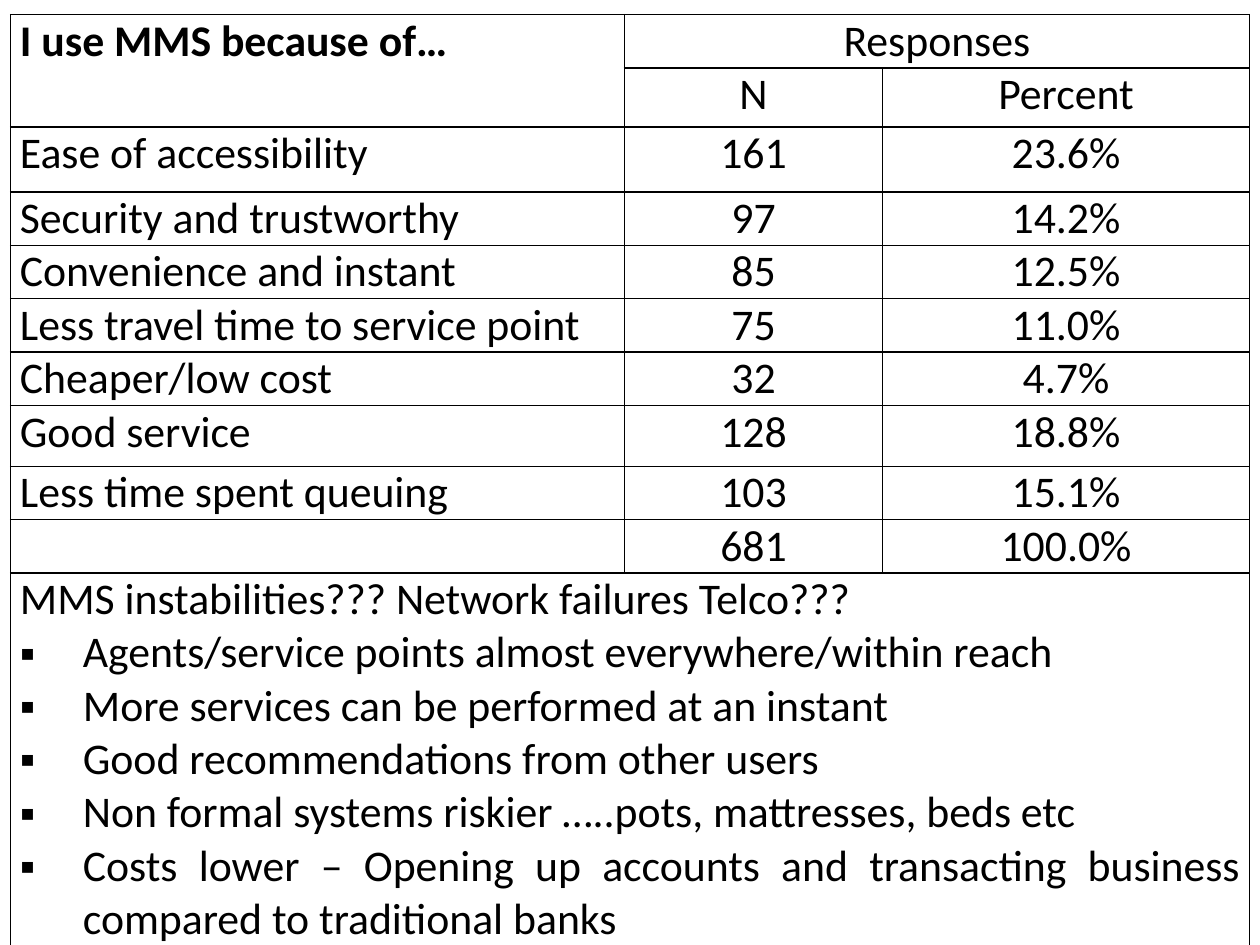
from lxml import etree
from pptx import Presentation
from pptx.dml import color
from pptx.enum import text
from pptx.oxml import ns
from pptx.util import Pt

BLACK = "000000"
ROW_HEIGHT = 30
TALL_ROWS = {1: 33.7, 2: 37.2, 7: 34.8, 10: 210.3}
COLUMN_WIDTHS = [350.8, 147.6, 209.5]
ROWS = [
    ("I use MMS because of…", "Responses", ""),
    ("", "N", "Percent"),
    ("Ease of accessibility", "161", "23.6%"),
    ("Security and trustworthy", "97", "14.2%"),
    ("Convenience and instant", "85", "12.5%"),
    ("Less travel time to service point", "75", "11.0%"),
    ("Cheaper/low cost", "32", "4.7%"),
    ("Good service", "128", "18.8%"),
    ("Less time spent queuing", "103", "15.1%"),
    ("", "681", "100.0%"),
    ("MMS instabilities??? Network failures Telco???", "", ""),
]
REASONS = [
    "Agents/service points almost everywhere/within reach",
    "More services can be performed at an instant",
    "Good recommendations from other users",
    "Non formal systems riskier …..pots, mattresses, beds etc",
    "Costs lower – Opening up accounts and transacting business "
    "compared to traditional banks",
]


def rgb(value):
    """Turn a hex string into a colour."""
    return color.RGBColor.from_string(value)


def write(para, words, size=25, bold=False, font="Calibri", fill=BLACK,
          align=text.PP_ALIGN.JUSTIFY):
    """Put formatted words into a paragraph."""
    para.alignment = align
    span = para.add_run()
    span.text = words
    span.font.size = Pt(size)
    span.font.bold = bold
    span.font.name = font
    span.font.color.rgb = rgb(fill)


def add_bullet(para, symbol="▪", indent=36):
    """Give a paragraph a hanging bullet."""
    properties = para._p.get_or_add_pPr()
    properties.set("marL", str(Pt(indent)))
    properties.set("indent", str(-Pt(indent)))
    etree.SubElement(properties, ns.qn("a:buFont"), typeface="Arial")
    etree.SubElement(properties, ns.qn("a:buChar"), char=symbol)


def style_cell(cell, line=BLACK, width=1):
    """Set the margins, the empty fill and the four borders of a cell."""
    cell.margin_left = cell.margin_right = Pt(5.4)
    cell.margin_top = cell.margin_bottom = Pt(0)
    properties = cell._tc.get_or_add_tcPr()
    for side in ("lnL", "lnR", "lnT", "lnB"):
        border = etree.SubElement(properties, ns.qn(f"a:{side}"), w=str(Pt(width)))
        solid = etree.SubElement(border, ns.qn("a:solidFill"))
        etree.SubElement(solid, ns.qn("a:srgbClr"), val=line)
    cell.fill.background()


def add_grid(page, left, top):
    """Add the bordered table with its merged cells."""
    heights = [TALL_ROWS.get(i, ROW_HEIGHT) for i in range(len(ROWS))]
    grid = page.shapes.add_table(
        len(ROWS), len(COLUMN_WIDTHS), Pt(left), Pt(top),
        Pt(sum(COLUMN_WIDTHS)), Pt(sum(heights))).table
    grid.first_row = grid.horz_banding = False
    for column, width in zip(grid.columns, COLUMN_WIDTHS):
        column.width = Pt(width)
    for r, (row, height, values) in enumerate(zip(grid.rows, heights, ROWS)):
        row.height = Pt(height)
        for c, (cell, words) in enumerate(zip(row.cells, values)):
            style_cell(cell)
            if words:
                align = text.PP_ALIGN.CENTER if c else text.PP_ALIGN.JUSTIFY
                write(cell.text_frame.paragraphs[0], words,
                      bold=r == c == 0, align=align)
    grid.cell(0, 0).merge(grid.cell(1, 0))
    grid.cell(0, 1).merge(grid.cell(0, 2))
    grid.cell(10, 0).merge(grid.cell(10, 2))
    return grid


def add_reasons(cell, reasons):
    """Add the bulleted reasons below the first paragraph of a cell."""
    for words in reasons:
        para = cell.text_frame.add_paragraph()
        write(para, words)
        add_bullet(para)


def main():
    """Build the slide and save the deck."""
    deck = Presentation()
    deck.slide_width, deck.slide_height = Pt(720), Pt(540)
    page = deck.slides.add_slide(deck.slide_layouts[6])
    grid = add_grid(page, left=6, top=8.3)
    add_reasons(grid.cell(10, 0), REASONS)
    deck.save("out.pptx")


if __name__ == "__main__":
    main()
